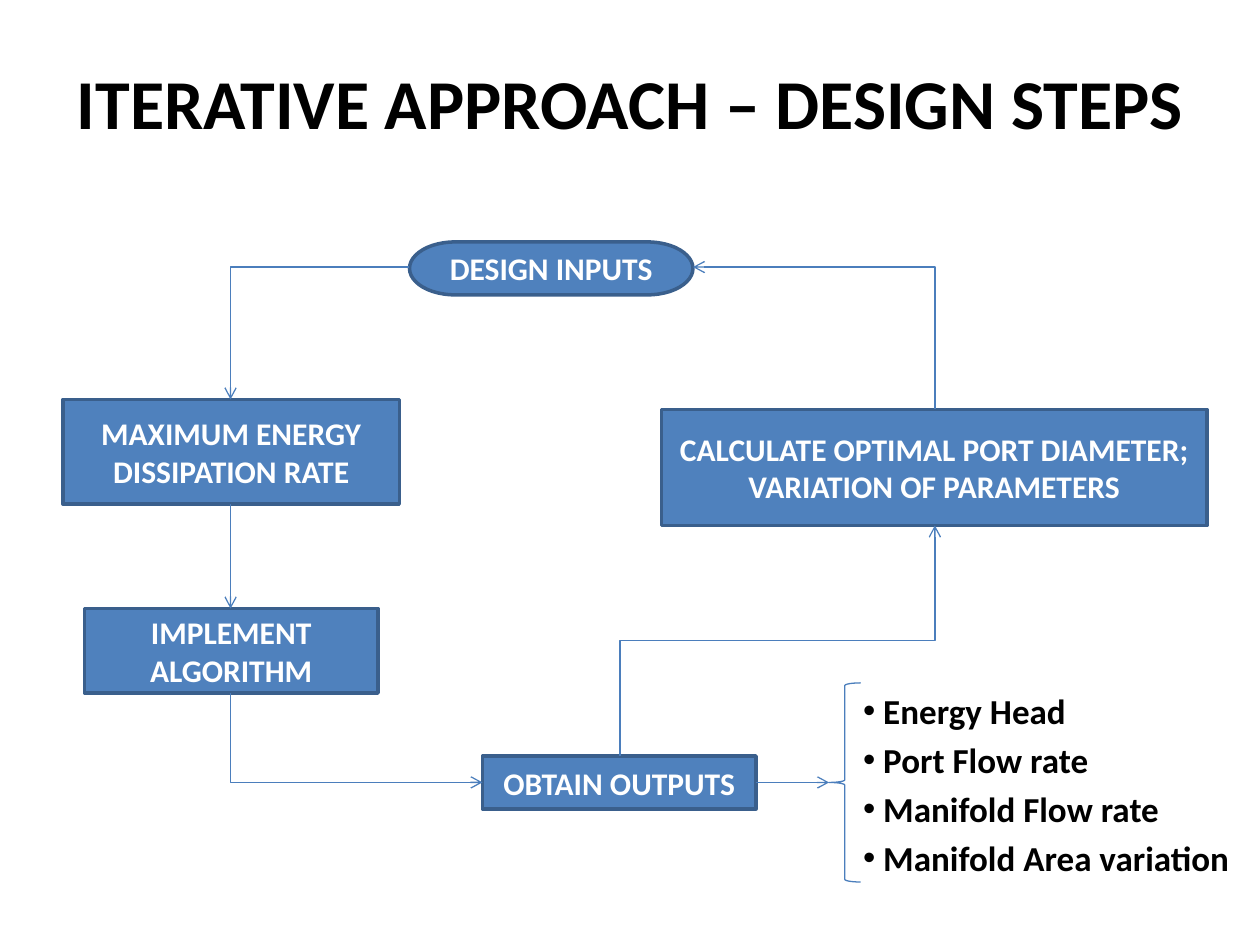
"""Build the design steps flow chart slide."""
from dataclasses import dataclass

from lxml.etree import SubElement
from pptx import Presentation
from pptx.dml.color import RGBColor
from pptx.enum.shapes import MSO_CONNECTOR, MSO_SHAPE
from pptx.enum.text import MSO_ANCHOR, PP_ALIGN
from pptx.oxml.ns import qn
from pptx.util import Inches, Pt


@dataclass(frozen=True)
class Theme:
    """Colours, font and sizes of the slide."""
    fill: RGBColor = RGBColor(0x4F, 0x81, 0xBD)
    edge: RGBColor = RGBColor(0x3A, 0x5F, 0x8C)
    link: RGBColor = RGBColor(0x4B, 0x7E, 0xBC)
    dark: RGBColor = RGBColor(0, 0, 0)
    light: RGBColor = RGBColor(255, 255, 255)
    face: str = "Calibri"
    title: int = 40
    item: int = 20
    step: int = 18
    thick: float = 2
    thin: float = 0.75


THEME = Theme()


def style(para, size, color, align):
    """Set the font and alignment of a paragraph."""
    font = para.font
    font.name, font.size, font.bold = THEME.face, Pt(size), True
    font.color.rgb = color
    para.alignment = align


def place(shape, left, top, width, height):
    """Move and size a shape in inches."""
    shape.left, shape.top = Inches(left), Inches(top)
    shape.width, shape.height = Inches(width), Inches(height)


def stroke(shape, color, width):
    """Set the outline of a shape or connector."""
    shape.line.color.rgb = color
    shape.line.width = Pt(width)


def add_title(slide, text):
    """Fill the title placeholder."""
    title = slide.shapes.title
    place(title, 0.25, 0, 9.5, 1.61)
    frame = title.text_frame
    frame.text = text
    frame.vertical_anchor = MSO_ANCHOR.MIDDLE
    style(frame.paragraphs[0], THEME.title, THEME.dark, PP_ALIGN.CENTER)


def add_list(slide, items):
    """Fill the body placeholder with a bulleted list."""
    body = slide.placeholders[1]
    place(body, 6.75, 5.42, 3.25, 1.58)
    frame = body.text_frame
    frame.text = "\n".join(items)
    frame.vertical_anchor = MSO_ANCHOR.TOP
    for para in frame.paragraphs:
        style(para, THEME.item, THEME.dark, PP_ALIGN.LEFT)
        para.space_before = Pt(THEME.item * 0.2)
        props = para._p.get_or_add_pPr()
        props.set("marL", str(Inches(0.16)))
        props.set("indent", str(-Inches(0.16)))
        bullet = props.makeelement(qn("a:buChar"), {"char": "•"})
        props.find(qn("a:defRPr")).addprevious(bullet)


def add_step(slide, kind, text, *box):
    """Add a filled box with a centred label."""
    step = slide.shapes.add_shape(kind, *map(Inches, box))
    step.shadow.inherit = False
    step.fill.solid()
    step.fill.fore_color.rgb = THEME.fill
    stroke(step, THEME.edge, THEME.thick)
    frame = step.text_frame
    frame.text = text
    frame.word_wrap = True
    frame.vertical_anchor = MSO_ANCHOR.MIDDLE
    style(frame.paragraphs[0], THEME.step, THEME.light, PP_ALIGN.CENTER)


def add_brace(slide, *box):
    """Add an open left brace."""
    brace = slide.shapes.add_shape(MSO_SHAPE.LEFT_BRACE, *map(Inches, box))
    brace.shadow.inherit = False
    brace.fill.background()
    stroke(brace, THEME.link, THEME.thin)


def add_link(slide, start, end, kind=MSO_CONNECTOR.STRAIGHT):
    """Add an arrow from start to end."""
    link = slide.shapes.add_connector(kind, *map(Inches, start + end))
    stroke(link, THEME.link, THEME.thin)
    SubElement(link.line._get_or_add_ln(), qn("a:tailEnd"), type="arrow")
    SubElement(link._element.spPr, qn("a:effectLst"))
    return link


def add_bend(slide, start, end, turns=1, upright=False):
    """Add an elbow arrow; an upright one leaves its start vertically."""
    (x1, y1), (x2, y2) = start, end
    if upright:
        midx, midy = (x1 + x2) / 2, (y1 + y2) / 2
        dx, dy = (y1 - y2) / 2, (x2 - x1) / 2
        start, end = (midx - dx, midy - dy), (midx + dx, midy + dy)
    link = add_link(slide, start, end, MSO_CONNECTOR.ELBOW)
    props = link._element.spPr
    props.find(qn("a:prstGeom")).set("prst", f"bentConnector{turns + 1}")
    if upright:
        props.find(qn("a:xfrm")).set("rot", str(270 * 60000))


def main():
    """Build and save the slide."""
    deck = Presentation()
    deck.slide_width, deck.slide_height = Inches(10), Inches(7.5)
    slide = deck.slides.add_slide(deck.slide_layouts[0])
    add_title(slide, "ITERATIVE APPROACH – DESIGN STEPS")
    add_list(slide, ["Energy Head", "Port Flow rate",
                     "Manifold Flow rate", "Manifold Area variation"])
    rect, process = MSO_SHAPE.RECTANGLE, MSO_SHAPE.FLOWCHART_PROCESS
    steps = [
        (MSO_SHAPE.FLOWCHART_TERMINATOR, "DESIGN INPUTS",
         3.25, 1.92, 2.25, 0.42),
        (rect, "MAXIMUM ENERGY DISSIPATION RATE", 0.5, 3.17, 2.67, 0.83),
        (process, "IMPLEMENT ALGORITHM", 0.67, 4.83, 2.33, 0.67),
        (process, "OBTAIN OUTPUTS", 3.83, 6, 2.17, 0.42),
        (rect, "CALCULATE OPTIMAL PORT DIAMETER; VARIATION OF PARAMETERS",
         5.25, 3.25, 4.33, 0.92),
    ]
    for step in steps:
        add_step(slide, *step)
    add_brace(slide, 6.58, 5.42, 0.25, 1.58)
    left, right, top, base = 1.83, 7.42, 2.12, 6.21
    add_link(slide, (6, base), (6.58, base))
    add_link(slide, (left, 4), (left, 4.83))
    add_bend(slide, (3.25, top), (left, 3.17))
    add_bend(slide, (left, 5.5), (3.83, base), upright=True)
    add_bend(slide, (4.92, 6), (right, 4.17), turns=2, upright=True)
    add_bend(slide, (right, 3.25), (5.5, top), upright=True)
    deck.save("out.pptx")


if __name__ == "__main__":
    main()
